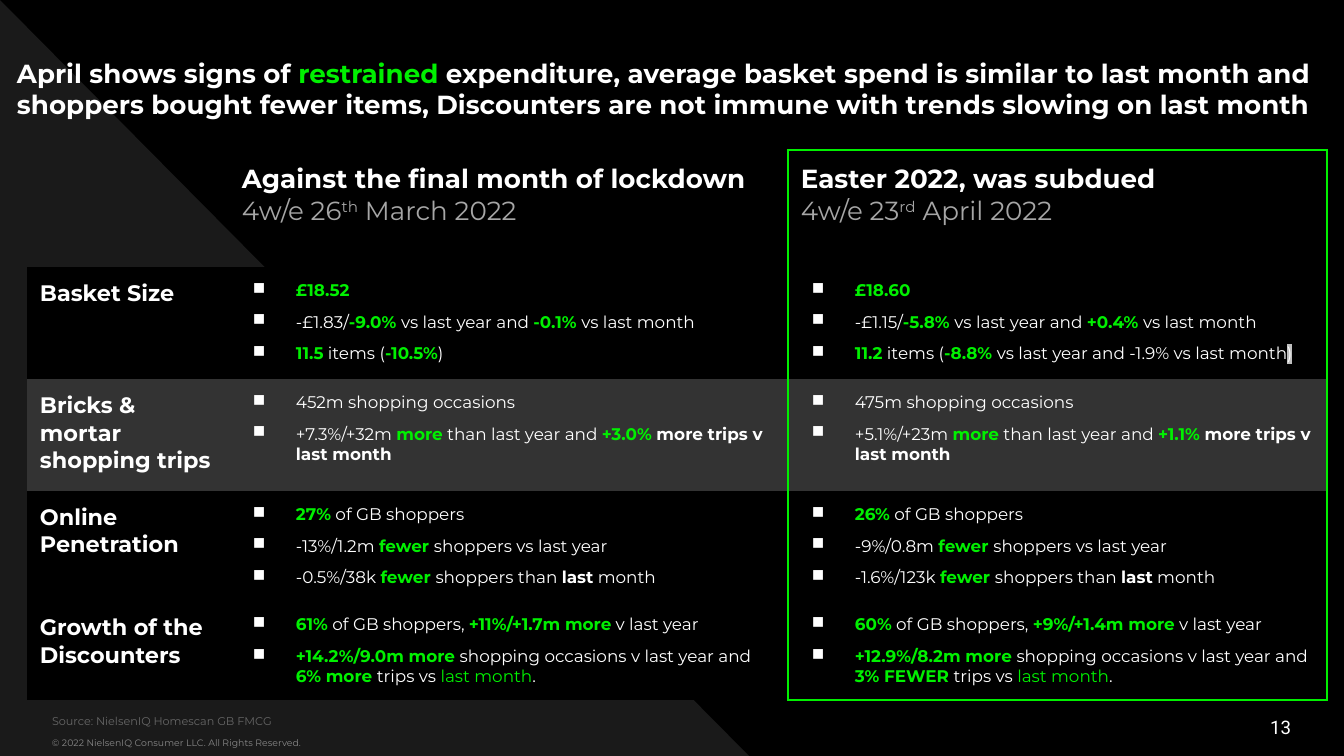
from dataclasses import dataclass, field
from typing import NamedTuple

from lxml import etree
from pptx import Presentation
from pptx import util as u
from pptx.dml import color
from pptx.enum import shapes, text
from pptx.oxml import ns

SCALE = 914400 / 134.4


@dataclass(frozen=True)
class Theme:
    black: str = "000000"
    white: str = "FFFFFF"
    green: str = "00F000"
    band: str = "333333"
    triangle: str = "1A1A1A"
    date: str = "A6A6A6"
    credit: str = "888888"
    source: str = "666666"
    mark: str = "C0C0C0"
    head_size: int = 14
    label_size: int = 12
    number_size: int = 10
    bullet_size: int = 9
    source_size: int = 6
    credit_size: int = 5
    font: str = "Montserrat"
    number_font: str = "Roboto"


THEME = Theme()


class Span(NamedTuple):
    words: str
    ink: str = THEME.white
    bold: bool = False
    raised: bool = False
    marked: bool = False


class Box(NamedTuple):
    left: int
    top: int
    width: int
    height: int


@dataclass
class Style:
    size: int
    font: str = THEME.font
    bulleted: bool = False
    para: dict = field(default_factory=dict)


class Row(NamedTuple):
    height: int
    fill: str | None
    cells: list


def px(length: int) -> u.Emu:
    return u.Emu(round(length * SCALE))


def rgb(code: str) -> color.RGBColor:
    return color.RGBColor.from_string(code)


def assign(target, values: dict) -> None:
    for name, value in values.items():
        setattr(target, name, value)


def add(parent, tag: str, **attributes: str):
    return etree.SubElement(parent, ns.qn(tag), attributes)


def green(words: str) -> Span:
    return Span(words, THEME.green, True)


def strong(words: str) -> Span:
    return Span(words, bold=True)


def write_span(para, span: Span, style: Style) -> None:
    run = para.add_run()
    run.text = span.words
    assign(run.font, {"size": u.Pt(style.size), "bold": span.bold, "name": style.font})
    run.font.color.rgb = rgb(span.ink)
    properties = run.font._element
    if span.raised:
        properties.set("baseline", "30000")
    if span.marked:
        highlight = etree.Element(ns.qn("a:highlight"))
        add(highlight, "a:srgbClr", val=THEME.mark)
        properties.find(ns.qn("a:solidFill")).addnext(highlight)


def write(frame, paras: list[list[Span]], style: Style) -> None:
    for index, spans in enumerate(paras):
        para = frame.add_paragraph() if index else frame.paragraphs[0]
        if style.bulleted:
            properties = para._p.get_or_add_pPr()
            properties.set("marL", str(px(54)))
            properties.set("indent", str(px(-43)))
            add(add(properties, "a:buClr"), "a:srgbClr", val=THEME.white)
            add(properties, "a:buChar", char="■")
        space = u.Pt(6 if style.bulleted and index else 0)
        assign(para, {"space_before": space, "alignment": text.PP_ALIGN.LEFT} | style.para)
        for span in spans:
            write_span(para, span, style)


def fill_box(shape, box: Box, spans: list[Span], style: Style, inset: int, anchor) -> None:
    assign(shape, {name: px(value) for name, value in box._asdict().items()})
    assign(shape.text_frame, {
        "word_wrap": True, "auto_size": text.MSO_AUTO_SIZE.NONE, "vertical_anchor": anchor,
        "margin_left": 0, "margin_right": 0, "margin_top": px(inset), "margin_bottom": px(inset),
    })
    write(shape.text_frame, [spans], style)


def border(cell, green_sides: str) -> None:
    properties = cell._tc.get_or_add_tcPr()
    for side in "LRTB":
        line = add(properties, f"a:ln{side}", w=str(u.Pt(1)))
        if side in green_sides:
            add(add(line, "a:solidFill"), "a:srgbClr", val=THEME.green)
        else:
            add(line, "a:noFill")


def heading(title: str, day: str, suffix: str, month: str) -> list[list[Span]]:
    return [[strong(title)], [Span(f"4w/e {day}", THEME.date),
                              Span(suffix, THEME.date, raised=True),
                              Span(f" {month} 2022", THEME.date)]]


def basket(spend: str, change: str, year: str, month: str, items: str, tail: list[Span]):
    return [[green(spend)],
            [Span(f"{change}/"), green(f"{year} "), Span("vs last year and "),
             green(f"{month} "), Span("vs last month")],
            [green(items), Span(" items ("), *tail]]


def trips(occasions: str, year: str, month: str) -> list[list[Span]]:
    return [[Span(f"{occasions} shopping occasions")],
            [Span(f"{year} "), green("more"), Span(" than last year and "),
             green(month), strong(" more trips v last month")]]


def online(share: str, year: str, month: str) -> list[list[Span]]:
    return [[green(share), Span(" of GB shoppers")],
            [Span(f"{year} "), green("fewer "), Span("shoppers vs last year")],
            [Span(f"{month} "), green("fewer "), Span("shoppers than "),
             strong("last"), Span(" month")]]


def discounters(share: str, gain: str, occasions: str, change: str) -> list[list[Span]]:
    return [[green(share), Span(" of GB shoppers, "), green(f"{gain} more"), Span(" v last year")],
            [green(f"{occasions} more "), Span("shopping occasions v last year and "),
             green(f"{change} "), Span("trips vs "), Span("last month", THEME.green), Span(".")]]


COLUMNS = [202, 559, 539]
ROWS = [
    Row(117, None, [[], heading("Against the final month of lockdown", "26", "th", "March"),
                    heading("Easter 2022, was subdued", "23", "rd", "April")]),
    Row(112, THEME.black, [
        [[strong("Basket Size")]],
        basket("£18.52", "-£1.83", "-9.0%", "-0.1%", "11.5", [green("-10.5%"), Span(")")]),
        basket("£18.60", "-£1.15", "-5.8%", "+0.4%", "11.2",
               [green("-8.8% "), Span("vs last year and -1.9% vs last month"),
                Span(")", marked=True)])]),
    Row(112, THEME.band, [[[strong("Bricks & mortar shopping trips")]],
                          trips("452m", "+7.3%/+32m", "+3.0%"),
                          trips("475m", "+5.1%/+23m", "+1.1%")]),
    Row(110, THEME.black, [[[strong("Online Penetration")]],
                           online("27%", "-13%/1.2m", "-0.5%/38k"),
                           online("26%", "-9%/0.8m", "-1.6%/123k")]),
    Row(99, THEME.black, [[[strong("Growth of the Discounters")]],
                          discounters("61%", "+11%/+1.7m", "+14.2%/9.0m", "6% more"),
                          discounters("60%", "+9%/+1.4m", "+12.9%/8.2m", "3% FEWER")]),
]


def draw_table(page) -> None:
    place = Box(27, 150, sum(COLUMNS), sum(row.height for row in ROWS))
    table = page.shapes.add_table(len(ROWS), len(COLUMNS), *map(px, place)).table
    assign(table, {"first_row": False, "horz_banding": False})
    for column, width in zip(table.columns, COLUMNS):
        column.width = px(width)
    for r, row in enumerate(ROWS):
        table.rows[r].height = px(row.height)
        for c, paras in enumerate(row.cells):
            cell = table.cell(r, c)
            assign(cell, {f"margin_{side}": px(13) for side in ("left", "right", "top", "bottom")})
            edges = "T" * (r == 0) + "B" * (r == len(ROWS) - 1)
            border(cell, ["", "R", "LR" + edges][c])
            if row.fill:
                cell.fill.solid()
                cell.fill.fore_color.rgb = rgb(row.fill)
            else:
                cell.fill.background()
            size = THEME.head_size if r == 0 else THEME.bullet_size if c else THEME.label_size
            write(cell.text_frame, paras, Style(size, bulleted=r > 0 and c > 0))


def draw_triangle(page) -> None:
    triangle = page.shapes.add_shape(shapes.MSO_SHAPE.RIGHT_TRIANGLE, *map(px, Box(0, 0, 751, 758)))
    triangle.shadow.inherit = False
    triangle.fill.solid()
    triangle.fill.fore_color.rgb = rgb(THEME.triangle)
    triangle.line.fill.background()
    triangle._element.getparent().insert(2, triangle._element)


def main() -> None:
    deck = Presentation()
    assign(deck, {"slide_width": px(1344), "slide_height": px(756)})
    page = deck.slides.add_slide(deck.slide_layouts[0])
    page.background.fill.solid()
    page.background.fill.fore_color.rgb = rgb(THEME.black)
    draw_triangle(page)
    anchor = text.MSO_ANCHOR
    title, source = page.placeholders
    fill_box(title, Box(17, 44, 1344, 99), [
        strong("April shows signs of "), green("restrained"),
        strong(" expenditure, average basket spend is similar to last month and shoppers bought "
               "fewer items, Discounters are not immune with trends slowing on last month"),
    ], Style(THEME.head_size), 13, anchor.TOP)
    fill_box(source, Box(52, 714, 1199, 27),
             [Span("Source: NielsenIQ Homescan GB FMCG", THEME.source)],
             Style(THEME.source_size), 13, anchor.BOTTOM)
    credit, number = (page.shapes.add_textbox(0, 0, 0, 0) for _ in range(2))
    fill_box(credit, Box(52, 730, 745, 27),
             [Span("© 2022 NielsenIQ Consumer LLC. All Rights Reserved.", THEME.credit)],
             Style(THEME.credit_size), 7, anchor.TOP)
    fill_box(number, Box(989, 707, 302, 40), [Span("13")],
             Style(THEME.number_size, THEME.number_font, para={"alignment": text.PP_ALIGN.RIGHT}),
             7, anchor.MIDDLE)
    draw_table(page)
    deck.save("out.pptx")


if __name__ == "__main__":
    main()
